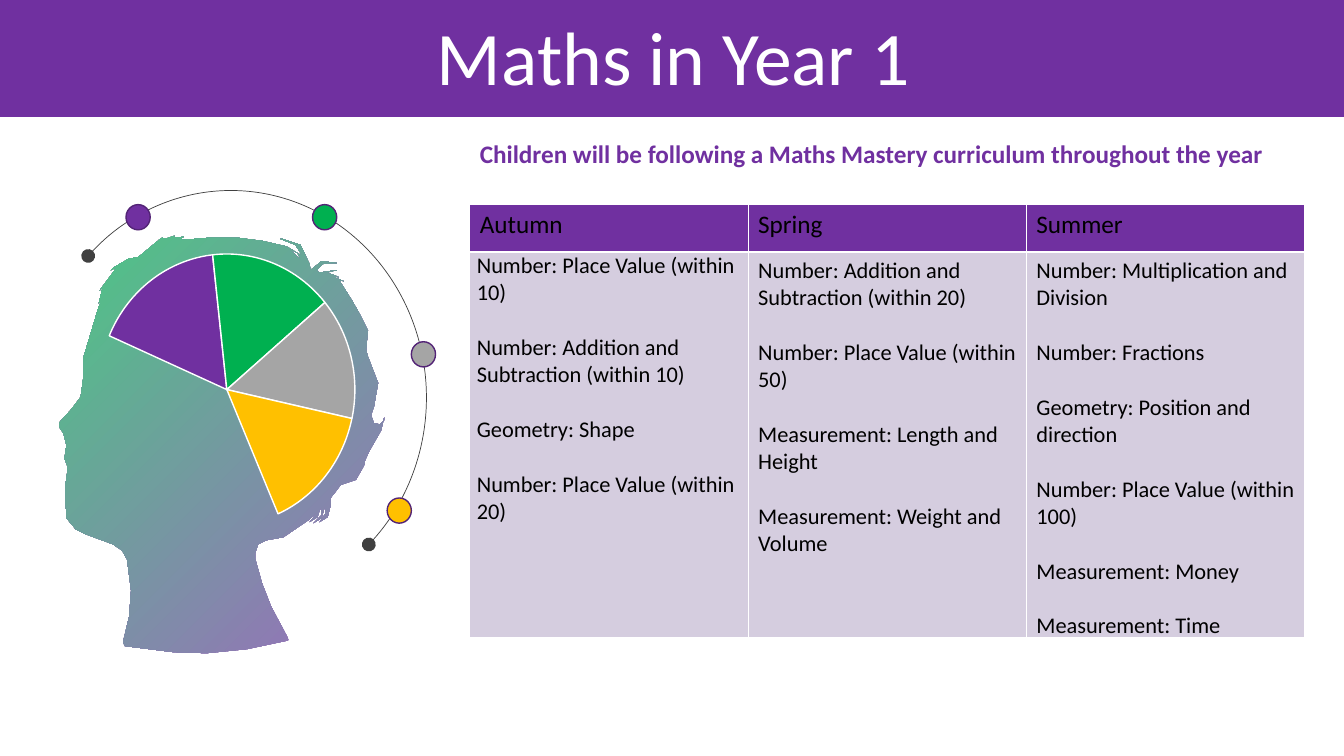
from dataclasses import dataclass

import lxml.etree
import pptx
import pptx.dml.color
import pptx.enum.shapes
import pptx.enum.text
import pptx.oxml
import pptx.oxml.ns
import pptx.util

Inches = pptx.util.Inches
SHAPES = pptx.enum.shapes.MSO_SHAPE
qn = pptx.oxml.ns.qn


@dataclass(frozen=True)
class Theme:
    """Colours, font and type sizes of the slide."""
    font: str = "Calibri"
    purple: str = "7030A0"
    green: str = "00B050"
    grey: str = "A5A5A5"
    amber: str = "FFC000"
    lilac: str = "D5CDDF"
    dot_line: str = "532476"
    arc_line: str = "404040"
    white: str = "FFFFFF"
    black: str = "000000"
    title: int = 54
    heading: int = 18
    body: int = 16


THEME = Theme()

TERMS = {
    "Autumn": ["Number: Place Value (within 10)",
               "Number: Addition and Subtraction (within 10)",
               "Geometry: Shape",
               "Number: Place Value (within 20)"],
    "Spring": ["Number: Addition and Subtraction (within 20)",
               "Number: Place Value (within 50)",
               "Measurement: Length and Height",
               "Measurement: Weight and Volume"],
    "Summer": ["Number: Multiplication and Division",
               "Number: Fractions",
               "Geometry: Position and direction",
               "Number: Place Value (within 100)",
               "Measurement: Money",
               "Measurement: Time"],
}

HEAD_OUTLINE = [
    (59, 324), (59, 319), (70, 307), (80, 294), (83, 272), (83, 254), (98, 204), (100, 201),
    (99, 200), (98, 201), (102, 184), (99, 188), (116, 165), (110, 168), (112, 166), (127, 157),
    (137, 155), (141, 152), (159, 137), (161, 136), (164, 137), (173, 134), (171, 136), (182, 135),
    (179, 137), (180, 138), (182, 138), (207, 136), (236, 136), (260, 139), (282, 144), (285, 145),
    (300, 154), (293, 143), (278, 137), (280, 137), (298, 143), (307, 162), (308, 168), (319, 159),
    (334, 161), (328, 161), (320, 162), (314, 168), (316, 170), (320, 170), (334, 168), (322, 171),
    (329, 172), (336, 175), (329, 174), (341, 179), (336, 178), (337, 179), (349, 198), (357, 212),
    (365, 228), (363, 247), (365, 254), (375, 280), (371, 303), (368, 312), (371, 320), (377, 321),
    (381, 317), (381, 314), (378, 327), (374, 334), (366, 348), (362, 357), (361, 362), (353, 376),
    (338, 381), (328, 394), (328, 401), (325, 413), (317, 418), (323, 409), (322, 403), (319, 414),
    (311, 419), (319, 411), (318, 403), (315, 413), (307, 418), (316, 407), (306, 416), (281, 433),
    (264, 436), (256, 440), (253, 449), (253, 454), (260, 479), (269, 502), (285, 532), (286, 535),
    (283, 536), (245, 544), (205, 548), (172, 547), (124, 541), (122, 537), (128, 512), (130, 486),
    (126, 455), (121, 446), (112, 440), (85, 430), (75, 425), (66, 414), (65, 397), (65, 381),
    (67, 366), (67, 363), (64, 355), (65, 347), (66, 342), (63, 330)]
CURL_GAP = [(299, 159), (295, 151), (287, 147), (291, 151)]


def rgb(code):
    """Return a colour object for a hex code."""
    return pptx.dml.color.RGBColor.from_string(code)


def write(frame, text, size, color=THEME.black, bold=False, align=None, gap=0, spacing=None):
    """Write one or more lines of text as paragraphs of a text frame."""
    frame.word_wrap = True
    lines = [text] if isinstance(text, str) else text
    for index, line in enumerate(lines):
        paragraph = frame.add_paragraph() if index else frame.paragraphs[0]
        paragraph.alignment = align
        paragraph.line_spacing = spacing
        paragraph.space_before = pptx.util.Pt(gap if index else 0)
        run = paragraph.add_run()
        run.text = line
        run.font.name, run.font.size, run.font.bold = THEME.font, pptx.util.Pt(size), bold
        run.font.color.rgb = rgb(color)


def add_preset(shapes, kind, box, fill=None, line=None, width=1, angles=()):
    """Add a preset shape with optional fill, line and angles in degrees."""
    shape = shapes.add_shape(kind, *map(Inches, box))
    shape.shadow.inherit = False
    for index, angle in enumerate(angles):
        shape.adjustments[index] = angle * 0.6
    if fill:
        shape.fill.solid()
        shape.fill.fore_color.rgb = rgb(fill)
    else:
        shape.fill.background()
    if line:
        shape.line.color.rgb = rgb(line)
        shape.line.width = pptx.util.Pt(width)
    else:
        shape.line.fill.background()
    return shape


def add_title_banner(slide, left, top, width, height):
    """Place the purple banner with the slide title on it."""
    banner = add_preset(slide.shapes, SHAPES.RECTANGLE, (left, top, width, height), THEME.purple)
    title = slide.shapes.title
    title.element.addprevious(banner.element)
    title.left, title.top = Inches(left + 0.35), Inches(top + 0.21)
    title.width, title.height = Inches(width - 0.67), Inches(0.79)
    title.text_frame.vertical_anchor = pptx.enum.text.MSO_ANCHOR.MIDDLE
    write(title.text_frame, "Maths in Year 1", THEME.title, THEME.white,
          align=pptx.enum.text.PP_ALIGN.CENTER, spacing=0.9)


def format_cell(cell, fill):
    """Give a table cell white borders and a solid fill."""
    properties = cell._tc.get_or_add_tcPr()
    for side in ("lnL", "lnR", "lnT", "lnB"):
        border = lxml.etree.SubElement(properties, qn(f"a:{side}"), w="12700")
        solid = lxml.etree.SubElement(border, qn("a:solidFill"))
        lxml.etree.SubElement(solid, qn("a:srgbClr"), val=THEME.white)
    cell.fill.solid()
    cell.fill.fore_color.rgb = rgb(fill)


def add_curriculum(slide, left, top, width, height):
    """Place the introduction and the table of topics by term."""
    intro = slide.shapes.add_textbox(*map(Inches, (left, top, width, 0.71)))
    write(intro.text_frame,
          "Children will be following a Maths Mastery curriculum throughout the year",
          THEME.heading, THEME.purple, bold=True)
    header_height, table_top = 0.47, top + 0.71
    table_height = height - 0.71
    table = slide.shapes.add_table(
        2, len(TERMS), *map(Inches, (left, table_top, width, table_height))).table
    table.rows[0].height = Inches(header_height)
    table.rows[1].height = Inches(table_height - header_height)
    for column, (term, topics) in enumerate(TERMS.items()):
        heading, content = table.cell(0, column), table.cell(1, column)
        format_cell(heading, THEME.purple)
        write(heading.text_frame, term, THEME.heading)
        format_cell(content, THEME.lilac)
        content.margin_bottom = 0
        if column == 0:
            content.margin_left = content.margin_right = Inches(0.07)
            content.margin_top = 0
        write(content.text_frame, topics, THEME.body, gap=19.5)


def add_head(shapes, left, top):
    """Draw the head silhouette with a translucent gradient."""
    builder = shapes.build_freeform(*HEAD_OUTLINE[0], scale=Inches(0.01))
    builder.add_line_segments(HEAD_OUTLINE[1:])
    builder.move_to(*CURL_GAP[0])
    builder.add_line_segments(CURL_GAP[1:])
    head = builder.convert_to_shape(Inches(left), Inches(top))
    head.shadow.inherit = False
    head.line.fill.background()
    head.fill.gradient()
    head.fill.gradient_angle = 135
    for stop, color in zip(head.fill.gradient_stops, (THEME.purple, THEME.green)):
        stop.color.rgb = rgb(color)
    for color in head.element.spPr.find(qn("a:gradFill")).iter(qn("a:srgbClr")):
        lxml.etree.SubElement(color, qn("a:alpha"), val="70000")


def add_mind_wheel(slide, left, top):
    """Draw the head with its pie segments, orbit and coloured dots."""
    shapes = slide.shapes.add_group_shape().shapes
    add_head(shapes, left, top)
    colors = (THEME.purple, THEME.green, THEME.grey, THEME.amber)
    angles = (204.6, 264, 318.4, 13, 67.6)
    for color, start, end in zip(colors, angles, angles[1:]):
        add_preset(shapes, SHAPES.PIE, (left + 0.98, top + 1.52, 2.54, 2.69),
                   color, THEME.white, angles=(start, end))
    orbit = add_preset(shapes, SHAPES.ARC, (left + 0.35, top + 0.89, 3.88, 4.11),
                       line=THEME.arc_line, width=0.5, angles=(224.8, 46.8))
    for end in ("headEnd", "tailEnd"):
        lxml.etree.SubElement(orbit.line._get_or_add_ln(), qn(f"a:{end}"), type="oval",
                              w="lg", len="lg")
    dots = ((1.25, 1.03), (3.1, 1.03), (4.08, 2.39), (3.84, 3.94))
    for color, (x, y) in zip(colors, dots):
        add_preset(shapes, SHAPES.OVAL, (left + x, top + y, 0.24, 0.25), color, THEME.dot_line)


def main():
    """Build the slide and save it."""
    deck = pptx.Presentation()
    deck.slide_width, deck.slide_height = Inches(13.33), Inches(7.5)
    slide = deck.slides.add_slide(deck.slide_layouts[5])
    add_title_banner(slide, 0, 0, 13.33, 1.16)
    add_curriculum(slide, 4.66, 1.32, 8.28, 5.01)
    add_mind_wheel(slide, 0, 1)
    deck.save("out.pptx")


if __name__ == "__main__":
    main()
